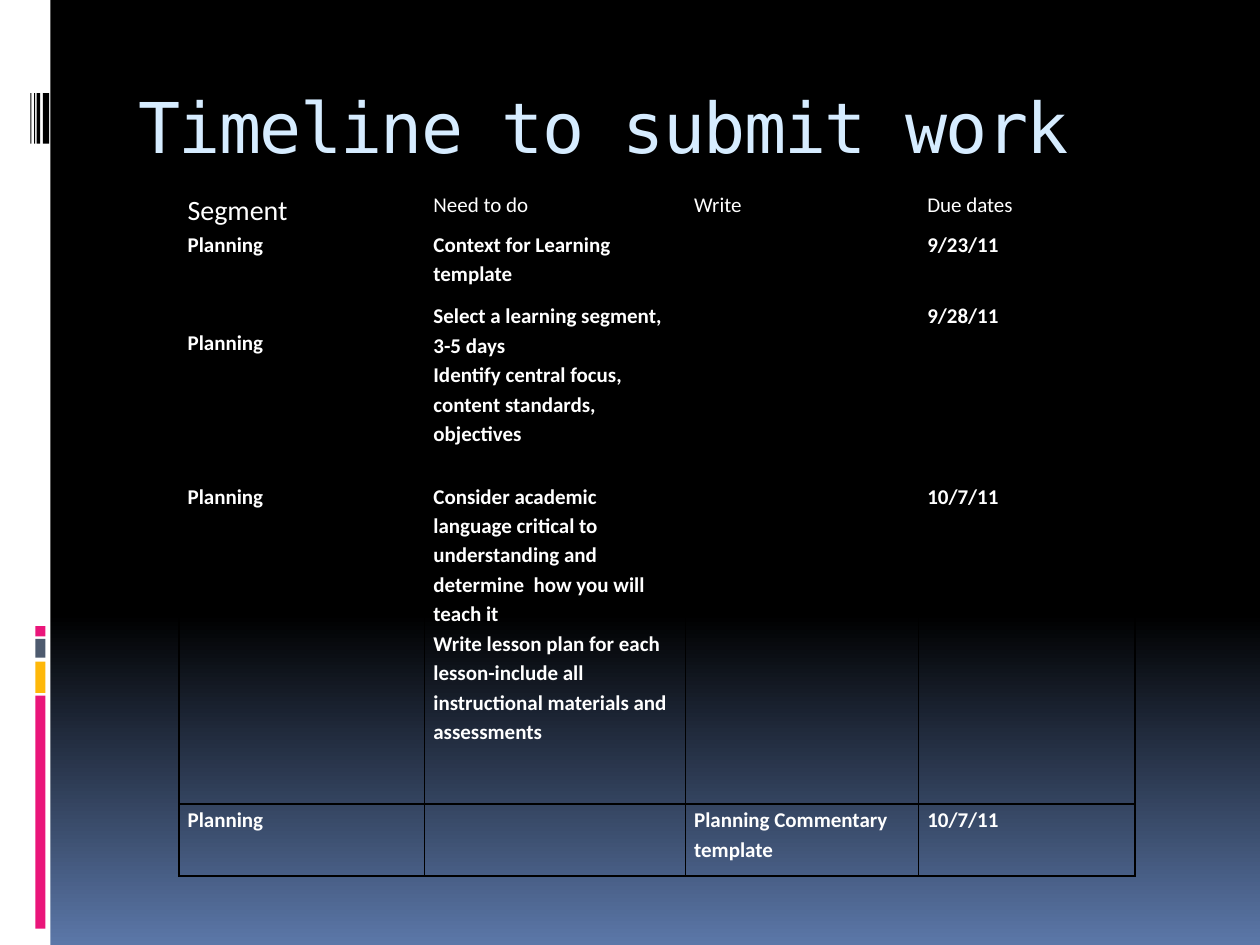
import pptx
import pptx.dml.color
import pptx.enum.shapes
import pptx.enum.text
import pptx.oxml
import pptx.oxml.ns
import pptx.util
from pptx.util import Inches

BLACK = pptx.dml.color.RGBColor(0x00, 0x00, 0x00)
WHITE = pptx.dml.color.RGBColor(0xFF, 0xFF, 0xFF)
BLUE = pptx.dml.color.RGBColor(0x5B, 0x77, 0xA8)
PINK = pptx.dml.color.RGBColor(0xEA, 0x15, 0x7A)
YELLOW = pptx.dml.color.RGBColor(0xFE, 0xB8, 0x0A)
SLATE = pptx.dml.color.RGBColor(0x4E, 0x5B, 0x6F)
PALE_BLUE = pptx.dml.color.RGBColor(0xD6, 0xEC, 0xFF)

ACCENT_BARS = [
    (4.97, 0.08, PINK),
    (5.07, 0.15, SLATE),
    (5.25, 0.25, YELLOW),
    (5.52, 1.85, PINK),
]
STRIPES = [(0.24, 0.01), (0.27, 0.01), (0.29, 0.03), (0.34, 0.05)]

COLUMN_WIDTHS = [1.95, 2.07, 1.85, 1.72]
ROW_HEIGHTS = [0.29, 0.57, 1.43, 2.57, 0.57]
ROWS = [
    ["Segment", "Need to do", "Write", "Due dates"],
    ["Planning", "Context for Learning template", "", "9/23/11"],
    [
        "Planning",
        "Select a learning segment, 3-5 days\n"
        "Identify central focus, content standards, objectives",
        "",
        "9/28/11",
    ],
    [
        "Planning",
        "Consider academic language critical to understanding and "
        "determine  how you will teach it\n"
        "Write lesson plan for each lesson-include all instructional "
        "materials and assessments",
        "",
        "10/7/11",
    ],
    ["Planning", "", "Planning Commentary template", "10/7/11"],
]
FIRST_LINE_DROPS = {(2, 0): 0.21}
CELL_FORMAT = {
    "margin_left": Inches(0.07),
    "margin_right": Inches(0.07),
    "margin_top": 0,
    "margin_bottom": 0,
}
TITLE_FRAME_FORMAT = {
    "margin_left": Inches(0.1),
    "margin_top": Inches(0.1),
    "vertical_anchor": pptx.enum.text.MSO_ANCHOR.TOP,
    "word_wrap": True,
}


def apply_format(target, values):
    for name, value in values.items():
        setattr(target, name, value)


def format_font(font, color, **values):
    apply_format(font, values)
    font.color.rgb = color


def add_bar(slide, left, top, width, height, color):
    shape = slide.shapes.add_shape(
        pptx.enum.shapes.MSO_SHAPE.RECTANGLE,
        Inches(left), Inches(top), Inches(width), Inches(height),
    )
    shape.shadow.inherit = False
    shape.fill.solid()
    shape.fill.fore_color.rgb = color
    shape.line.fill.background()


def paint_background(slide):
    fill = slide.background.fill
    fill.gradient()
    fill.gradient_angle = 270
    for stop, position, color in zip(fill.gradient_stops, (0.65, 1), (BLACK, BLUE)):
        stop.position = position
        stop.color.rgb = color


def add_side_band(slide, left, top, width, height):
    add_bar(slide, left, top, width, height, WHITE)
    for offset, bar_height, color in ACCENT_BARS:
        add_bar(slide, left + 0.28, top + offset, 0.08, bar_height, color)
    for offset, stripe_width in STRIPES:
        add_bar(slide, left + offset, top + 0.74, stripe_width, 0.4, BLACK)


def place_title(slide, left, top, width, height):
    title = slide.shapes.title
    apply_format(title, {
        "left": Inches(left), "top": Inches(top),
        "width": Inches(width), "height": Inches(height),
    })
    apply_format(title.text_frame, TITLE_FRAME_FORMAT)
    paragraph = title.text_frame.paragraphs[0]
    paragraph.alignment = pptx.enum.text.PP_ALIGN.LEFT
    run = paragraph.add_run()
    run.text = "Timeline to submit work"
    format_font(run.font, PALE_BLUE, name="DejaVu Sans Mono", size=pptx.util.Pt(40))
    run.font._element.set("spc", "-100")


def add_cell_borders(cell):
    properties = cell._tc.get_or_add_tcPr()
    for index, side in enumerate(("lnL", "lnR", "lnT", "lnB")):
        border = pptx.oxml.parse_xml(
            f'<a:{side} {pptx.oxml.ns.nsdecls("a")} w="{pptx.util.Pt(1)}">'
            f'<a:solidFill><a:srgbClr val="{BLACK}"/></a:solidFill></a:{side}>'
        )
        properties.insert(index, border)


def fill_cell(cell, text, size, bold):
    apply_format(cell, CELL_FORMAT)
    cell.fill.background()
    add_cell_borders(cell)
    cell.text = text
    for paragraph in cell.text_frame.paragraphs:
        paragraph.line_spacing = 1.15
        format_font(paragraph.font, WHITE, name="Calibri", size=size, bold=bold)
        for run in paragraph.runs:
            format_font(run.font, WHITE, name="Calibri", size=size, bold=bold)


def add_timeline(slide, left, top, width, height):
    table = slide.shapes.add_table(
        len(ROWS), len(COLUMN_WIDTHS),
        Inches(left), Inches(top), Inches(width), Inches(height),
    ).table
    apply_format(table, {"first_row": False, "horz_banding": False})
    for column, column_width in zip(table.columns, COLUMN_WIDTHS):
        column.width = Inches(column_width)
    for row, row_height in zip(table.rows, ROW_HEIGHTS):
        row.height = Inches(row_height)
    for row_index, texts in enumerate(ROWS):
        for column_index, text in enumerate(texts):
            size = 16 if row_index == column_index == 0 else 12
            cell = table.cell(row_index, column_index)
            fill_cell(cell, text, pptx.util.Pt(size), row_index > 0)
            drop = FIRST_LINE_DROPS.get((row_index, column_index), 0)
            cell.margin_top = Inches(drop)


def main():
    presentation = pptx.Presentation()
    presentation.slide_width = Inches(10)
    presentation.slide_height = Inches(7.5)
    slide = presentation.slides.add_slide(presentation.slide_layouts[5])
    paint_background(slide)
    add_side_band(slide, 0, 0, 0.4, 7.5)
    place_title(slide, 1, 0.56, 8.5, 1)
    add_timeline(slide, 1.42, 1.5, 7.58, 5.44)
    presentation.save("out.pptx")


if __name__ == "__main__":
    main()
